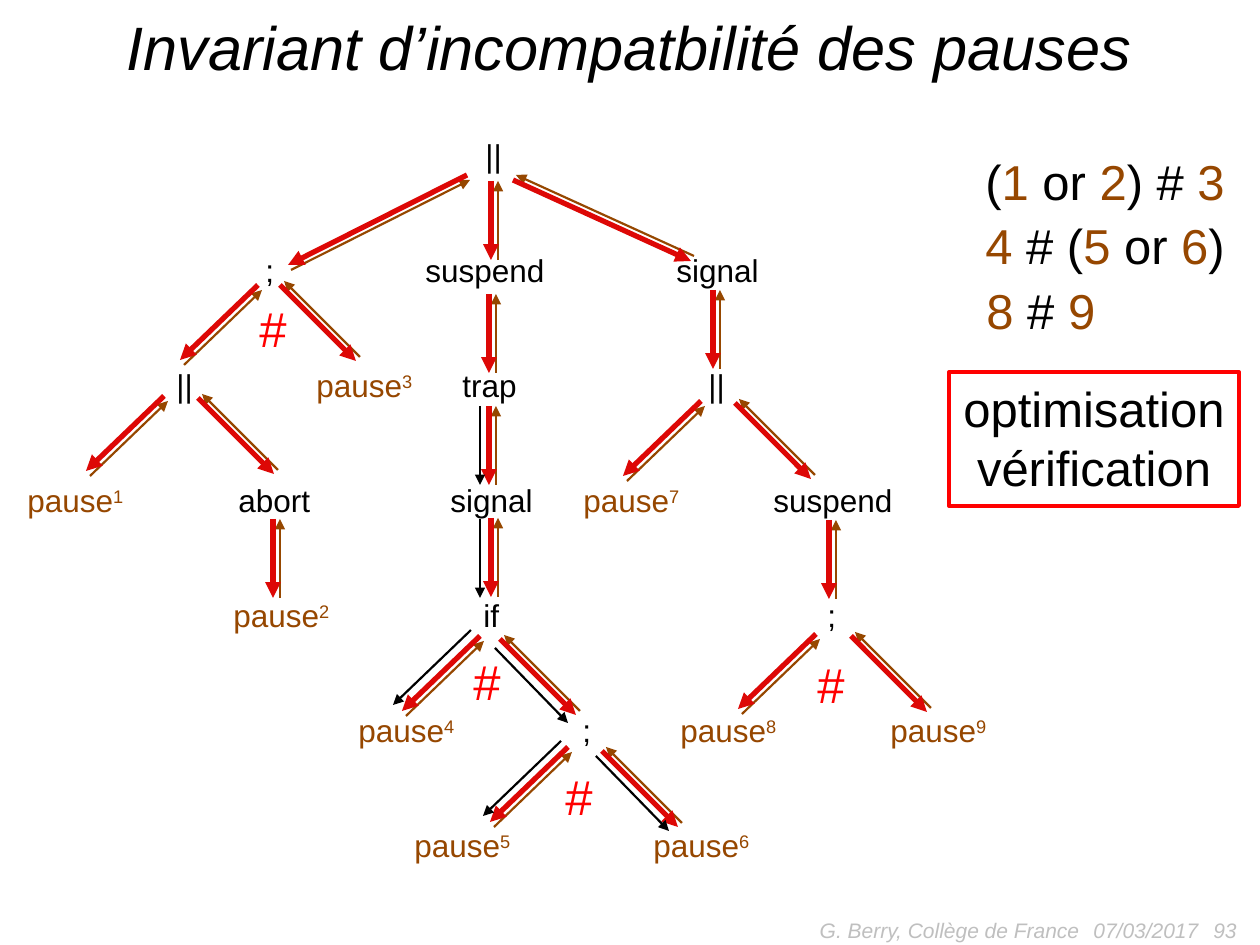
from lxml import etree
from pptx import Presentation
from pptx.dml.color import RGBColor
from pptx.enum.shapes import MSO_CONNECTOR, MSO_SHAPE
from pptx.enum.text import MSO_ANCHOR, PP_ALIGN
from pptx.oxml.ns import qn
from pptx.util import Emu, Pt

STRAIGHT = MSO_CONNECTOR.STRAIGHT
RECTANGLE = MSO_SHAPE.RECTANGLE
TOP, MIDDLE = MSO_ANCHOR.TOP, MSO_ANCHOR.MIDDLE
LEFT, CENTER, RIGHT = PP_ALIGN.LEFT, PP_ALIGN.CENTER, PP_ALIGN.RIGHT

EMU_PER_PX = 914400 / 126
COLORS = {
    "black": "000000",
    "brown": "964700",
    "descent": "DD0806",
    "red": "FF0000",
    "grey": "BFBFBF",
}

FIRST_ROW, ROW_STEP, LABEL_HEIGHT = 130, 115, 50
LABEL_WIDTHS = {
    "||": 42, ";": 34, "if": 42, "trap": 81, "abort": 98,
    "signal": 108, "suspend": 146, "pause": 123,
}
TREE_ROWS = [
    [("||", 473)],
    [(";", 253), ("suspend", 413), ("signal", 664)],
    [("||", 164), ("pause3", 304), ("trap", 450), ("||", 696)],
    [("pause1", 15), ("abort", 226), ("signal", 438), ("pause7", 571),
     ("suspend", 761)],
    [("pause2", 221), ("if", 471), (";", 815)],
    [("pause4", 346), (";", 570), ("pause8", 668), ("pause9", 878)],
    [("pause5", 402), ("pause6", 641)],
]

SPANS = {
    "down": (0, 79),
    "left": (-78, 75),
    "right": (76, 76),
    "far left": (-179, 90),
    "far right": (178, 81),
    "control right": (73, 75),
}
RETURN_SHIFTS = {
    "down": (7, 0),
    "left": (4, 5),
    "right": (4, -4),
    "far left": (3, 5),
    "far right": (3, -5),
}
BRANCHES = {
    "down": [(273, 519), (489, 294), (489, 406), (491, 518), (829, 520),
             (491, 181), (713, 290)],
    "left": [(258, 285), (164, 396), (480, 636), (568, 747), (816, 634),
             (701, 401)],
    "right": [(280, 285), (198, 398), (602, 751), (851, 636), (735, 403),
              (500, 639)],
    "far left": [(467, 175)],
    "far right": [(513, 180)],
}
CONTROL_PATHS = {
    "down": [(480, 406), (480, 519)],
    "left": [(471, 630), (561, 741)],
    "control right": [(495, 648), (596, 756)],
}
CONFLICTS = [(247, 292), (553, 760), (461, 645), (805, 648)]
FORMULAS = [
    (973, 145, 268, [("(", "black"), ("1", "brown"), (" or ", "black"),
                     ("2", "brown"), (") # ", "black"), ("3", "brown")]),
    (973, 209, 268, [("4", "brown"), (" # (", "black"), ("5", "brown"),
                     (" or ", "black"), ("6", "brown"), (")", "black")]),
    (974, 274, 136, [("8", "brown"), (" # ", "black"), ("9", "brown")]),
]


def px(value):
    return Emu(round(value * EMU_PER_PX))


def color(name):
    return RGBColor.from_string(COLORS[name])


def style(para, size, name, align=LEFT, italic=False):
    para.alignment = align
    para.font.name = "Arial"
    para.font.size = Pt(size)
    para.font.italic = italic
    if name:
        para.font.color.rgb = color(name)


def add_text(page, frame, text, size, name, align=LEFT, italic=False,
             wrap=False, anchor=TOP):
    box = page.shapes.add_textbox(*map(px, frame))
    box.text_frame.word_wrap = wrap
    box.text_frame.vertical_anchor = anchor
    para = box.text_frame.paragraphs[0]
    if text:
        para.add_run().text = text
    style(para, size, name, align, italic)
    return para


def add_label(page, label, left, row):
    word = label.rstrip("0123456789")
    number = label[len(word):]
    frame = (left, FIRST_ROW + row * ROW_STEP, LABEL_WIDTHS[word], LABEL_HEIGHT)
    para = add_text(page, frame, word, 18, "brown" if number else "black")
    if number:
        span = para.add_run()
        span.text = number
        span.font._element.set("baseline", "30000")


def add_formula(page, left, top, width, parts):
    para = add_text(page, (left, top, width, 72), "", 28, None)
    for text, name in parts:
        span = para.add_run()
        span.text = text
        span.font.color.rgb = color(name)


def add_arrow(page, start, end, name, width):
    arrow = page.shapes.add_connector(STRAIGHT, *map(px, start + end))
    arrow.line.color.rgb = color(name)
    arrow.line.width = Pt(width)
    line = arrow.line._get_or_add_ln()
    etree.SubElement(line, qn("a:tailEnd"), type="triangle")
    etree.SubElement(arrow._element.spPr, qn("a:effectLst"))


def moved(point, shift):
    return point[0] + shift[0], point[1] + shift[1]


def add_return_arrows(page):
    for direction, starts in BRANCHES.items():
        for start in starts:
            parent = moved(start, RETURN_SHIFTS[direction])
            child = moved(parent, SPANS[direction])
            add_arrow(page, child, parent, "brown", 1.25)


def add_descent_arrows(page, paths, name, width):
    for direction, starts in paths.items():
        for start in starts:
            add_arrow(page, start, moved(start, SPANS[direction]), name, width)


def add_uses_box(page):
    box = page.shapes.add_shape(RECTANGLE, *map(px, (949, 372, 290, 134)))
    box.shadow.inherit = False
    box.fill.background()
    box.line.color.rgb = color("red")
    box.line.width = Pt(2.25)
    frame = box.text_frame
    frame.word_wrap = False
    frame.vertical_anchor = TOP
    frame.margin_bottom = px(9)
    frame.text = "optimisation\nvérification"
    for para in frame.paragraphs:
        style(para, 28, "black", CENTER)


def add_footer(page):
    for text, left, width, align in [
        ("07/03/2017", 1081, 294, LEFT),
        ("93", 955, 294, RIGHT),
        ("G. Berry, Collège de France", 693, 399, RIGHT),
    ]:
        add_text(page, (left, 905, width, 50), text, 12, "grey", align,
                 italic=True, wrap=True, anchor=MIDDLE)


def main():
    deck = Presentation()
    deck.slide_width, deck.slide_height = px(1260), px(945)
    page = deck.slides.add_slide(deck.slide_layouts[6])
    add_return_arrows(page)
    add_footer(page)
    add_text(page, (15, 3, 1229, 87), "Invariant d’incompatbilité des pauses",
             35, "black", CENTER, italic=True, wrap=True)
    for row, labels in enumerate(TREE_ROWS):
        for label, left in labels:
            add_label(page, label, left, row)
    add_descent_arrows(page, BRANCHES, "descent", 3)
    add_descent_arrows(page, CONTROL_PATHS, "black", 1.25)
    for left, top in CONFLICTS:
        add_text(page, (left, top, 53, 72), "#", 28, "red")
    for formula in FORMULAS:
        add_formula(page, *formula)
    add_uses_box(page)
    deck.save("out.pptx")


if __name__ == "__main__":
    main()
